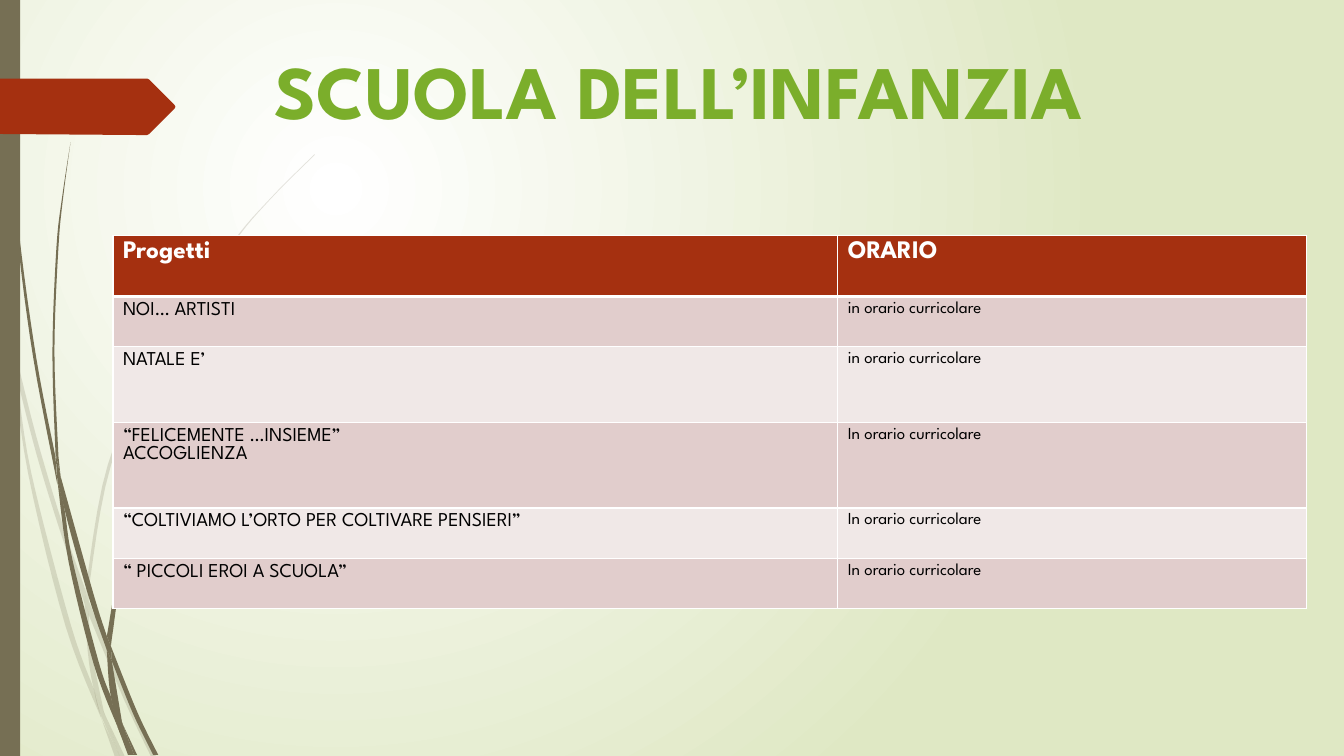
import pptx
import pptx.dml.color
import pptx.enum.shapes
import pptx.enum.text
import pptx.oxml
import pptx.oxml.ns
import pptx.util

PX = 9144
FONT = "League Spartan"
OLIVE = "766F54"
RUST = "A53010"
WHITE = "FFFFFF"
BANDS = ("E1CDCC", "F0E8E7")
STEPS = 6

PALE_BLADES = [
    ([(11, 350), (9, 322), (0, 282)], [(0, 299), (11, 350)]),
    ([(85, 586), (62, 520), (36, 433), (14, 345)], [(17, 376), (36, 450), (58, 522), (84, 599)]),
    ([(88, 610), (123, 694), (150, 751)], [(155, 751), (127, 692), (88, 596)]),
    ([(119, 751), (124, 751)], [(105, 711)]),
    ([(11, 350), (28, 470), (65, 621), (101, 714)], [(93, 683), (70, 619), (31, 469), (17, 376)]),
    ([(84, 599), (87, 646), (93, 683), (105, 711)], [(103, 706), (91, 646), (88, 608)]),
    ([(88, 584), (110, 462), (160, 349), (229, 245), (268, 198), (312, 154)],
     [(312, 153), (268, 197), (228, 244), (158, 348), (107, 461), (85, 584)], [(88, 596)]),
    ([(101, 714), (114, 751)], [(119, 751)]),
    ([(88, 608), (88, 596)], [(85, 586), (84, 599)]),
    ([(93, 683), (99, 707), (119, 751)], [(105, 711), (96, 692)]),
]
DARK_BLADES = [
    ([(3, 0), (4, 48), (7, 110), (17, 233), (33, 355), (57, 481)],
     [(55, 453), (36, 355), (19, 232), (8, 109), (5, 48), (4, 0)]),
    ([(60, 472), (64, 505), (88, 592), (106, 645)], [(106, 631), (93, 590), (60, 472)]),
    ([(111, 656), (132, 708), (152, 749)], [(157, 749), (136, 706), (110, 641)]),
    ([(57, 477), (68, 557), (93, 659), (117, 722)],
     [(110, 691), (98, 657), (72, 556), (64, 505), (57, 477)]),
    ([(58, 453), (54, 349), (58, 245), (63, 193), (70, 141)],
     [(70, 141), (62, 193), (56, 245), (52, 349), (55, 449)], [(60, 472)]),
    ([(133, 749), (136, 749)], [(122, 719)]),
    ([(57, 477), (64, 505)], [(60, 472), (55, 449)]),
    ([(111, 633), (125, 552), (158, 476), (205, 406), (231, 374), (261, 344)],
     [(260, 344), (231, 373), (204, 405), (156, 474), (122, 551), (106, 631)], [(110, 641)]),
    ([(117, 722), (127, 749)], [(131, 749)]),
    ([(106, 645), (110, 691), (122, 719)], [(121, 716), (111, 656)]),
    ([(106, 645), (111, 656)], [(110, 641), (106, 631)]),
    ([(110, 691), (117, 722), (130, 749)], [(133, 749), (122, 719)]),
]
TAG = [(173, 108), (148, 133), (146, 134), (136, 134), (0, 133), (0, 78),
       (146, 78), (148, 79), (173, 104), (174, 106)]

ROWS = [
    (60, ["Progetti"], "ORARIO"),
    (50, ["NOI… ARTISTI"], "in orario curricolare"),
    (75, ["NATALE E’"], "in orario curricolare"),
    (85, ["“FELICEMENTE …INSIEME”", "ACCOGLIENZA"], "In orario curricolare"),
    (50, ["“COLTIVIAMO L’ORTO PER COLTIVARE PENSIERI”"], "In orario curricolare"),
    (50, ["“ PICCOLI EROI A SCUOLA”"], "In orario curricolare"),
]
COLUMNS = (719, 465)


def emu(*lengths):
    return [round(length * PX) for length in lengths]


def rgb(color):
    return pptx.dml.color.RGBColor.from_string(color)


def put_text(tf, lines, size=14, color="000000", bold=False, align=None):
    for i, line in enumerate(lines):
        p = tf.paragraphs[0] if i == 0 else tf.add_paragraph()
        p.alignment = align
        r = p.add_run()
        r.text = line
        r.font.name = FONT
        r.font.size = pptx.util.Pt(size)
        r.font.bold = bold
        r.font.color.rgb = rgb(color)


def paint(sp, color, alpha=100):
    sp.shadow.inherit = False
    sp.line.fill.background()
    sp.fill.solid()
    sp.fill.fore_color.rgb = rgb(color)
    if alpha < 100:
        for clr in sp.fill._xPr.iter(pptx.oxml.ns.qn("a:srgbClr")):
            child = clr.makeelement(pptx.oxml.ns.qn("a:alpha"), {"val": str(alpha * 1000)})
            clr.append(child)
    return sp


def smooth(knots):
    padded = [knots[0], *knots, knots[-1]]
    points = []
    for a, b, c, d in zip(padded, padded[1:], padded[2:], padded[3:]):
        for step in range(STEPS):
            t = step / STEPS
            points.append([
                (2 * q + (r - p) * t + (2 * p - 5 * q + 4 * r - w) * t ** 2
                 + (3 * q - p - 3 * r + w) * t ** 3) / 2
                for p, q, r, w in zip(a, b, c, d)
            ])
    return points + [knots[-1]]


def add_outline(s, points, color, alpha=100):
    start, *rest = [emu(*point) for point in points]
    builder = s.shapes.build_freeform(*start)
    builder.add_line_segments(rest, close=True)
    return paint(builder.convert_to_shape(), color, alpha)


def add_blades(s, blades, alpha=100):
    shapes = []
    for edges in blades:
        points = [point for edge in edges for point in smooth(edge)]
        shapes.append(add_outline(s, points, OLIVE, alpha))
    s.shapes.add_group_shape(shapes)


def set_background(s):
    fill = s.background.fill
    fill.gradient()
    for stop, color, position in zip(fill.gradient_stops, (WHITE, "DFE8C4"), (0, 1)):
        stop.color.rgb = rgb(color)
        stop.position = position
    lin = next(s.element.iter(pptx.oxml.ns.qn("a:lin")))
    circle = pptx.oxml.parse_xml(
        f'<a:path {pptx.oxml.ns.nsdecls("a")} path="circle">'
        '<a:fillToRect l="50000" t="50000" r="100000" b="100000"/></a:path>')
    lin.getparent().replace(lin, circle)


def add_title(s, text):
    sp = s.shapes.title
    sp.left, sp.top, sp.width, sp.height = emu(242, 38, 863, 101)
    tf = sp.text_frame
    tf.auto_size = pptx.enum.text.MSO_AUTO_SIZE.NONE
    tf.word_wrap = False
    tf.vertical_anchor = pptx.enum.text.MSO_ANCHOR.BOTTOM
    put_text(tf, [text], size=54, color="7BAE2B", bold=True,
             align=pptx.enum.text.PP_ALIGN.CENTER)


def set_borders(cell, **widths):
    tcPr = cell._tc.get_or_add_tcPr()
    for side in "LRTB":
        width = pptx.util.Pt(widths.get(side, 1))
        tcPr.append(pptx.oxml.parse_xml(
            f'<a:ln{side} {pptx.oxml.ns.nsdecls("a")} w="{width}">'
            f'<a:solidFill><a:srgbClr val="{WHITE}"/></a:solidFill></a:ln{side}>'))


def add_projects_table(s):
    heights = [row[0] for row in ROWS]
    frame = s.shapes.add_table(len(ROWS), len(COLUMNS),
                               *emu(112, 234, sum(COLUMNS), sum(heights)))
    table = frame.table
    for column, width in zip(table.columns, emu(*COLUMNS)):
        column.width = width
    for i, (height, project, hours) in enumerate(ROWS):
        table.rows[i].height = emu(height)[0]
        for j, lines in enumerate((project, [hours])):
            cell = table.cell(i, j)
            set_borders(cell, B=3 if i == 0 else 1, T=3 if i == 1 else 1)
            cell.fill.solid()
            cell.fill.fore_color.rgb = rgb(BANDS[(i - 1) % 2] if i else RUST)
            if i == 0:
                put_text(cell.text_frame, lines, size=18, color=WHITE, bold=True)
            else:
                put_text(cell.text_frame, lines, size=(14, 12)[j])


def main():
    prs = pptx.Presentation()
    prs.slide_width, prs.slide_height = emu(1333, 750)
    s = prs.slides.add_slide(prs.slide_layouts[5])
    set_background(s)
    add_blades(s, PALE_BLADES, alpha=20)
    add_blades(s, DARK_BLADES)
    bar = s.shapes.add_shape(pptx.enum.shapes.MSO_SHAPE.RECTANGLE, *emu(0, 0, 20, 750))
    paint(bar, OLIVE)
    add_outline(s, TAG, RUST)
    add_projects_table(s)
    add_title(s, "SCUOLA DELL’INFANZIA")
    prs.save("out.pptx")


if __name__ == "__main__":
    main()
